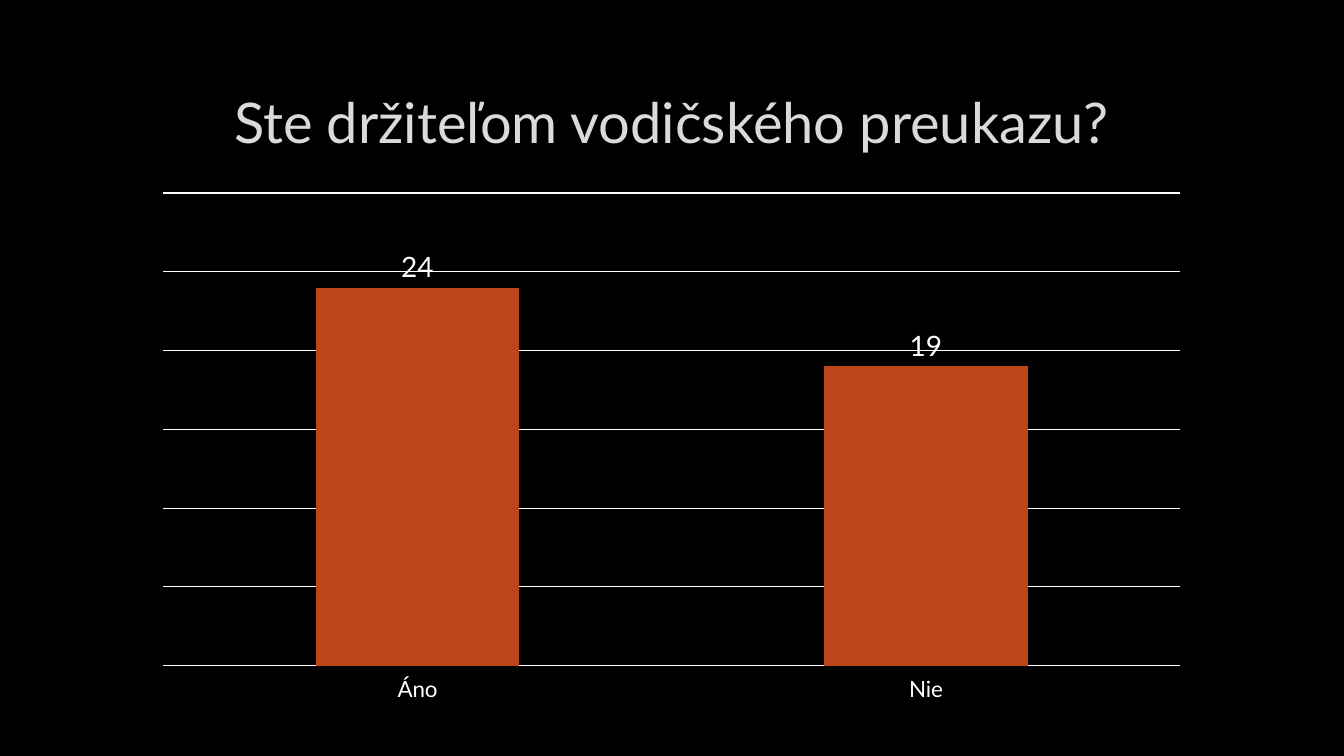
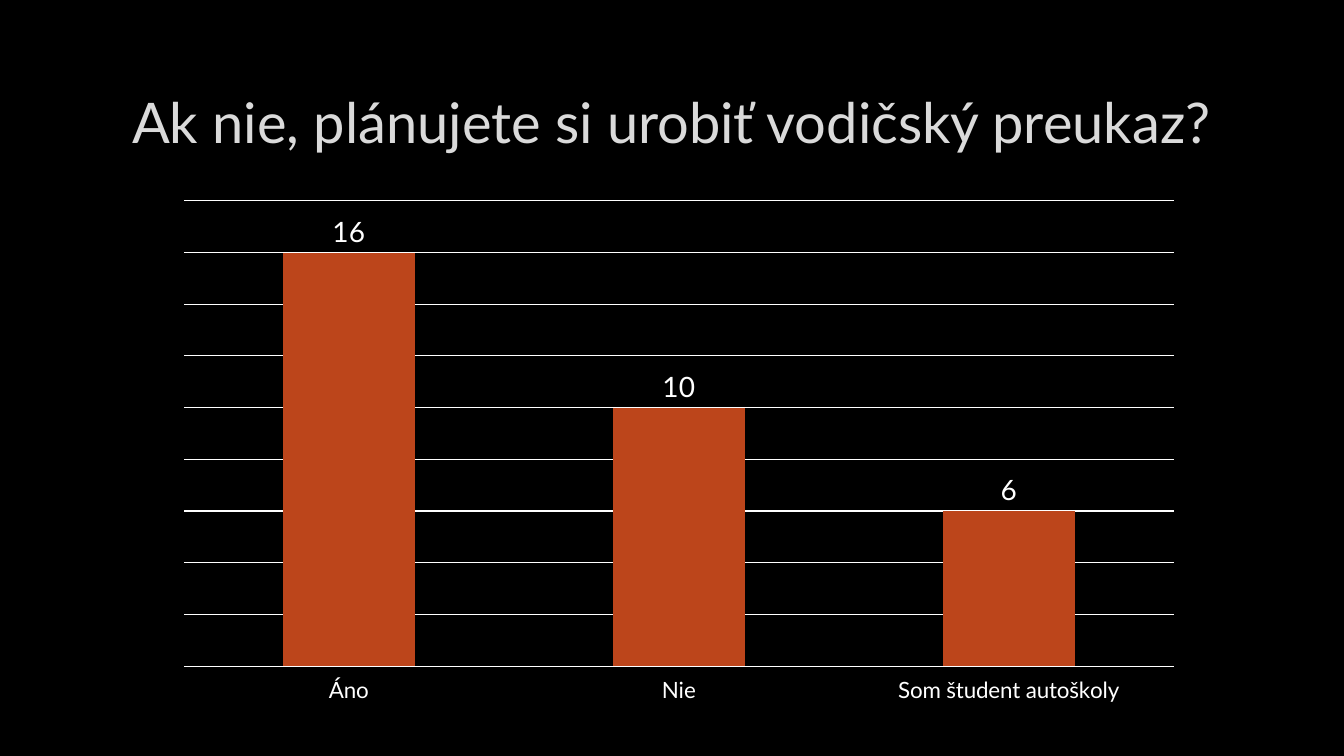
from pptx import Presentation
from pptx.chart.data import CategoryChartData
from pptx.dml.color import RGBColor
from pptx.enum.chart import XL_CHART_TYPE as ChartType
from pptx.enum.chart import XL_LABEL_POSITION as LabelPos
from pptx.enum.chart import XL_TICK_LABEL_POSITION as TickPos
from pptx.enum.chart import XL_TICK_MARK as TickMark
from pptx.enum.text import MSO_ANCHOR, PP_ALIGN
from pptx.util import Pt

FONT = "Lato"
COLORS = {
    "background": "000000",
    "title": "DADADA",
    "chart_text": "FFFFFF",
    "grid": "FFFFFF",
    "bar": "BC451B",
}
TITLE_BOX = (72, 48, 815, 76.5)

# One entry per question: title, chart box, answers, axis maximum and step
QUESTIONS = [
    {
        "title": "Ste držiteľom vodičského preukazu?",
        "box": (101.5, 130.3, 756.7, 378.7),
        "answers": {"Áno": 24, "Nie": 19},
        "scale": (30, 5),
    },
    {
        "title": "Ak nie, plánujete si urobiť vodičský preukaz?",
        "box": (116.6, 136.1, 736.6, 373),
        "answers": {"Áno": 16, "Nie": 10, "Som študent autoškoly": 6},
        "scale": (18, 2),
    },
]


def color(name):
    return RGBColor.from_string(COLORS[name])


def style_font(font, size, color_name):
    font.name = FONT
    font.size = Pt(size)
    font.color.rgb = color(color_name)


def add_title(slide, box, text):
    sp = slide.shapes.add_textbox(*map(Pt, box))
    tf = sp.text_frame
    tf.word_wrap = True
    tf.vertical_anchor = MSO_ANCHOR.MIDDLE
    p = tf.paragraphs[0]
    p.alignment = PP_ALIGN.CENTER
    r = p.add_run()
    r.text = text
    style_font(r.font, 40, "title")


def add_answer_chart(slide, box, answers, scale):
    data = CategoryChartData()
    data.categories = list(answers)
    data.add_series("Odpovede", list(answers.values()))
    chart = slide.shapes.add_chart(
        ChartType.COLUMN_CLUSTERED, *map(Pt, box), data).chart
    chart.has_title = False
    chart.has_legend = False
    style_font(chart.font, 10, "chart_text")

    # Category axis: labels only
    cat = chart.category_axis
    cat.major_tick_mark = cat.minor_tick_mark = TickMark.NONE
    cat.tick_label_position = TickPos.LOW
    cat.format.line.fill.background()
    style_font(cat.tick_labels.font, 16, "chart_text")

    # Value axis: hidden, gridlines only
    val = chart.value_axis
    val.visible = False
    val.minimum_scale = 0
    val.maximum_scale, val.major_unit = scale
    val.has_major_gridlines = True
    grid = val.major_gridlines.format.line
    grid.width = Pt(0.75)
    grid.color.rgb = color("grid")

    # Bars with their values on top
    plot = chart.plots[0]
    plot.gap_width = 150
    plot.vary_by_categories = False
    fill = plot.series[0].format.fill
    fill.solid()
    fill.fore_color.rgb = color("bar")
    plot.has_data_labels = True
    labels = plot.data_labels
    labels.show_value = True
    labels.position = LabelPos.OUTSIDE_END
    style_font(labels.font, 20, "chart_text")


def add_question_slide(prs, question):
    slide = prs.slides.add_slide(prs.slide_layouts[6])
    add_title(slide, TITLE_BOX, question["title"])
    add_answer_chart(slide, question["box"], question["answers"], question["scale"])


def main():
    prs = Presentation()
    prs.slide_width, prs.slide_height = Pt(960), Pt(540)
    # Shared background on the master
    fill = prs.slide_master.background.fill
    fill.solid()
    fill.fore_color.rgb = color("background")
    for question in QUESTIONS:
        add_question_slide(prs, question)
    prs.save("out.pptx")


if __name__ == "__main__":
    main()
